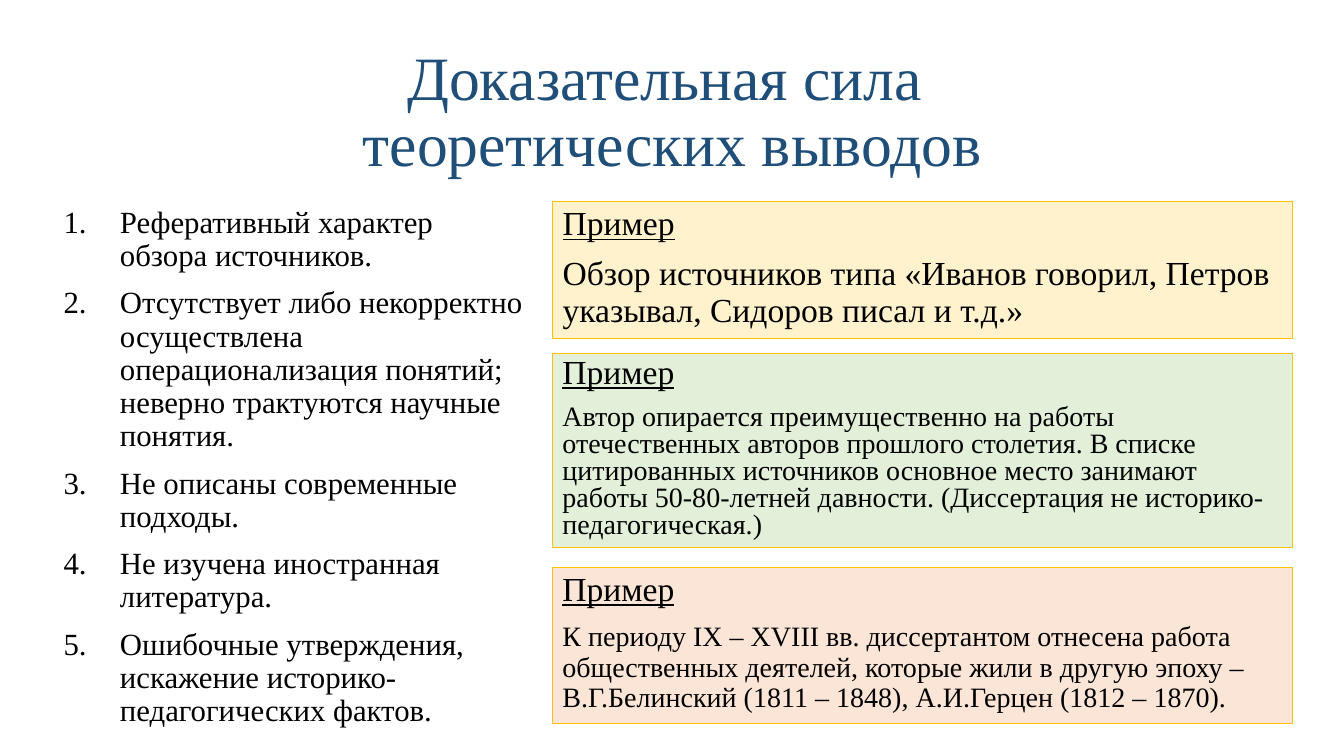
from lxml import etree
from pptx import Presentation
from pptx.dml.color import RGBColor
from pptx.enum.shapes import MSO_SHAPE
from pptx.enum.text import MSO_ANCHOR, MSO_AUTO_SIZE, PP_ALIGN
from pptx.oxml.ns import qn
from pptx.util import Inches, Pt

RECTANGLE = MSO_SHAPE.RECTANGLE
TOP, MIDDLE = MSO_ANCHOR.TOP, MSO_ANCHOR.MIDDLE
LEFT, CENTER = PP_ALIGN.LEFT, PP_ALIGN.CENTER
NO_AUTOFIT = MSO_AUTO_SIZE.NONE

FONT = "Times New Roman"
BLACK = RGBColor(0x00, 0x00, 0x00)
NAVY = RGBColor(0x1F, 0x4E, 0x79)
GOLD = RGBColor(0xFF, 0xC0, 0x00)
CREAM = RGBColor(0xFF, 0xF2, 0xCC)
PALE_GREEN = RGBColor(0xE2, 0xF0, 0xD9)
PEACH = RGBColor(0xFB, 0xE5, 0xD6)

SHORTCOMINGS = [
    "Реферативный характер обзора источников.",
    "Отсутствует либо некорректно осуществлена операционализация понятий; "
    "неверно трактуются научные понятия.",
    "Не описаны современные подходы.",
    "Не изучена иностранная литература.",
    "Ошибочные утверждения, искажение историко-педагогических фактов.",
]
# top, height, fill, line spacing, text size, text
EXAMPLES = [
    (2, 1.36, CREAM, 0.9, 24,
     "Обзор источников типа «Иванов говорил, Петров указывал, Сидоров писал и т.д.»"),
    (3.51, 1.92, PALE_GREEN, 0.8, 20,
     "Автор опирается преимущественно на работы отечественных авторов прошлого столетия. "
     "В списке цитированных источников основное место занимают работы 50-80-летней "
     "давности. (Диссертация не историко-педагогическая.)"),
    (5.63, 1.55, PEACH, 0.9, 20,
     "К периоду IХ – ХVIII вв. диссертантом отнесена работа общественных деятелей, которые "
     "жили в другую эпоху – В.Г.Белинский (1811 – 1848), А.И.Герцен (1812 – 1870)."),
]


def place(shape, left, top, width, height, anchor=TOP):
    """Position a shape and give its text frame wrapping, fixed-size text."""
    shape.left, shape.top = Inches(left), Inches(top)
    shape.width, shape.height = Inches(width), Inches(height)
    frame = shape.text_frame
    frame.word_wrap = True
    frame.auto_size = NO_AUTOFIT
    frame.vertical_anchor = anchor


def format_paragraph(paragraph, size, color=BLACK, spacing=0.9, before=10,
                     alignment=LEFT, underline=False, numbered=False):
    paragraph_format = {"alignment": alignment, "line_spacing": spacing,
                        "space_before": Pt(before), "space_after": Pt(0)}
    for name, value in paragraph_format.items():
        setattr(paragraph, name, value)
    for run in paragraph.runs:
        font_format = {"name": FONT, "size": Pt(size), "underline": underline}
        for name, value in font_format.items():
            setattr(run.font, name, value)
        run.font.color.rgb = color
    properties = paragraph._p.get_or_add_pPr()
    indent = Inches(0.56) if numbered else 0
    properties.set("marL", str(indent))
    properties.set("indent", str(-indent))
    if numbered:
        etree.SubElement(properties, qn("a:buFont"), typeface="+mj-lt")
        etree.SubElement(properties, qn("a:buAutoNum"), type="arabicPeriod")
    else:
        etree.SubElement(properties, qn("a:buNone"))


presentation = Presentation()
presentation.slide_width = Inches(13.33)
presentation.slide_height = Inches(7.5)
slide = presentation.slides.add_slide(presentation.slide_layouts.get_by_name("Two Content"))
title, shortcomings, first_example = slide.placeholders

place(title, 0.92, 0.4, 11.5, 1.45, MIDDLE)
title.text_frame.text = "Доказательная сила \vтеоретических выводов"
format_paragraph(title.text_frame.paragraphs[0], 44, NAVY, before=0, alignment=CENTER)

place(shortcomings, 0.53, 2, 4.78, 5.45)
shortcomings.text_frame.text = "\n".join(SHORTCOMINGS)
for paragraph in shortcomings.text_frame.paragraphs:
    format_paragraph(paragraph, 22, numbered=True)

example_boxes = [first_example]
for _ in EXAMPLES[1:]:
    box = slide.shapes.add_shape(RECTANGLE, 0, 0, 0, 0)
    box.shadow.inherit = False
    example_boxes.append(box)

for box, (top, height, fill, spacing, size, text) in zip(example_boxes, EXAMPLES):
    place(box, 5.48, top, 7.34, height)
    box.fill.solid()
    box.fill.fore_color.rgb = fill
    box.line.color.rgb = GOLD
    box.line.width = Pt(0.5)
    box.text_frame.text = "Пример\n" + text
    heading, body = box.text_frame.paragraphs
    format_paragraph(heading, 24, spacing=spacing, underline=True)
    format_paragraph(body, size, spacing=spacing)

presentation.save("out.pptx")
